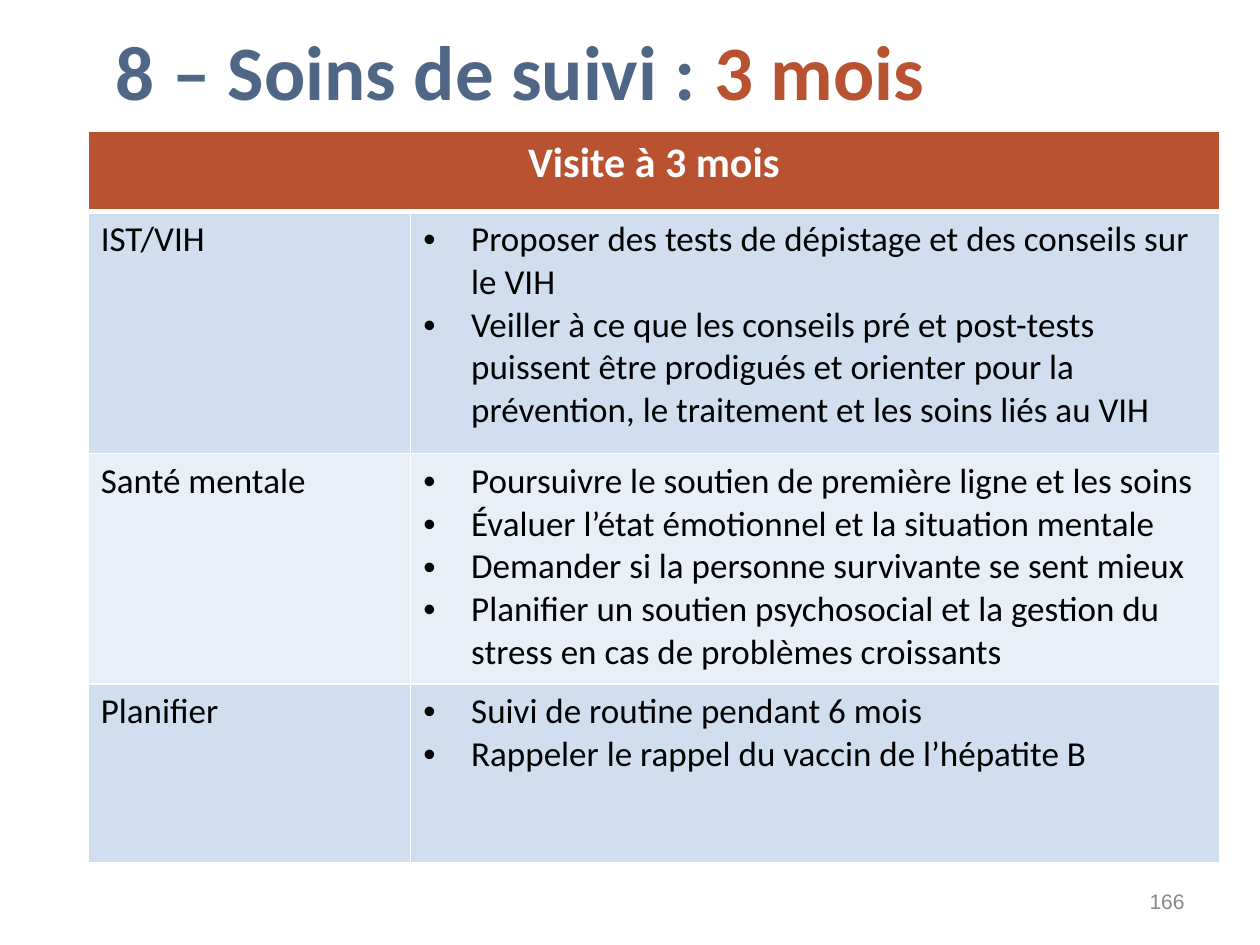
from dataclasses import dataclass

from lxml import etree
from pptx import Presentation
from pptx import util as u
from pptx.dml.color import RGBColor
from pptx.enum import text
from pptx.oxml import ns

PX = u.Inches(1) // 100  # one px is a hundredth of an inch


@dataclass(frozen=True)
class Theme:
    blue: str = "506687"
    rust: str = "B85231"
    ink: str = "000000"
    white: str = "FFFFFF"
    grey: str = "888888"
    bands: tuple = ("D0DEEF", "E9EFF7")
    body_font: str = "Calibri"
    number_font: str = "Arial"
    title_size: int = 44
    header_size: int = 24
    body_size: int = 20
    number_size: int = 12


THEME = Theme()

COLUMNS = (256, 642)
ROWS = (64, 192, 183, 142)
HEADER = "Visite à 3 mois"
CARE = (
    ("IST/VIH", (
        "Proposer des tests de dépistage et des conseils sur le VIH",
        "Veiller à ce que les conseils pré et post-tests puissent être prodigués "
        "et orienter pour la prévention, le traitement et les soins liés au VIH",
    )),
    ("Santé mentale", (
        "Poursuivre le soutien de première ligne et les soins",
        "Évaluer l’état émotionnel et la situation mentale",
        "Demander si la personne survivante se sent mieux",
        "Planifier un soutien psychosocial et la gestion du stress en cas de "
        "problèmes croissants",
    )),
    ("Planifier", (
        "Suivi de routine pendant 6 mois",
        "Rappeler le rappel du vaccin de l’hépatite B",
    )),
)


def to_emu(box):
    return [length * PX for length in box]


def add_run(paragraph, words, size, color, bold=False, font=THEME.body_font):
    run = paragraph.add_run()
    run.text = words
    run.font.name = font
    run.font.size = u.Pt(size)
    run.font.bold = bold
    run.font.color.rgb = RGBColor.from_string(color)


def add_line(slide, box, align):
    """Add a vertically centred text box and return its paragraph."""
    frame = slide.shapes.add_textbox(*to_emu(box)).text_frame
    frame.word_wrap = True
    frame.vertical_anchor = text.MSO_ANCHOR.MIDDLE
    paragraph = frame.paragraphs[0]
    paragraph.alignment = align
    return paragraph


def add_bullet(paragraph, hang=38):
    properties = paragraph._p.get_or_add_pPr()
    properties.set("marL", str(hang * PX))
    properties.set("indent", str(-hang * PX))
    color = etree.SubElement(properties, ns.qn("a:buClr"))
    etree.SubElement(color, ns.qn("a:srgbClr"), val=THEME.ink)
    etree.SubElement(properties, ns.qn("a:buFont"), typeface="Arial")
    etree.SubElement(properties, ns.qn("a:buChar"), char="•")


def style_cell(cell, fill, bottom=1):
    """Set white borders, widths in points, then the fill."""
    properties = cell._tc.get_or_add_tcPr()
    for side, width in (("L", 1), ("R", 1), ("T", 1), ("B", bottom)):
        border = etree.SubElement(properties, ns.qn(f"a:ln{side}"), w=str(u.Pt(width)))
        solid = etree.SubElement(border, ns.qn("a:solidFill"))
        etree.SubElement(solid, ns.qn("a:srgbClr"), val=THEME.white)
    cell.fill.solid()
    cell.fill.fore_color.rgb = RGBColor.from_string(fill)


def add_title(slide, box):
    title = add_line(slide, box, text.PP_ALIGN.LEFT)
    title.line_spacing = 0.9
    add_run(title, "8 – Soins de suivi : ", THEME.title_size, THEME.blue, bold=True)
    add_run(title, "3 mois", THEME.title_size, THEME.rust, bold=True)


def add_visit_table(slide, left, top):
    box = to_emu((left, top, sum(COLUMNS), sum(ROWS)))
    table = slide.shapes.add_table(len(ROWS), len(COLUMNS), *box).table
    table.horz_banding = False
    for column, width in zip(table.columns, COLUMNS):
        column.width = width * PX
    for row, height in zip(table.rows, ROWS):
        row.height = height * PX

    header = table.cell(0, 0)
    header.merge(table.cell(0, 1))
    for cell in table.rows[0].cells:
        style_cell(cell, THEME.rust, bottom=3)
    heading = header.text_frame.paragraphs[0]
    heading.alignment = text.PP_ALIGN.CENTER
    add_run(heading, HEADER, THEME.header_size, THEME.white, bold=True)

    for index, (topic, actions) in enumerate(CARE):
        topic_cell, action_cell = table.rows[index + 1].cells
        for cell in (topic_cell, action_cell):
            style_cell(cell, THEME.bands[index % 2])
        add_run(topic_cell.text_frame.paragraphs[0], topic, THEME.body_size, THEME.ink)
        frame = action_cell.text_frame
        for position, action in enumerate(actions):
            paragraph = frame.add_paragraph() if position else frame.paragraphs[0]
            add_bullet(paragraph)
            add_run(paragraph, action, THEME.body_size, THEME.ink)


def add_page_number(slide, box):
    number = add_line(slide, box, text.PP_ALIGN.RIGHT)
    add_run(number, "166", THEME.number_size, THEME.grey, font=THEME.number_font)


def main():
    deck = Presentation()
    deck.slide_width, deck.slide_height = to_emu((1000, 750))
    slide = deck.slides.add_slide(deck.slide_layouts[6])
    add_visit_table(slide, 70, 104)
    add_page_number(slide, (717, 695, 233, 40))
    add_title(slide, (82, 14, 715, 92))
    deck.save("out.pptx")


if __name__ == "__main__":
    main()
